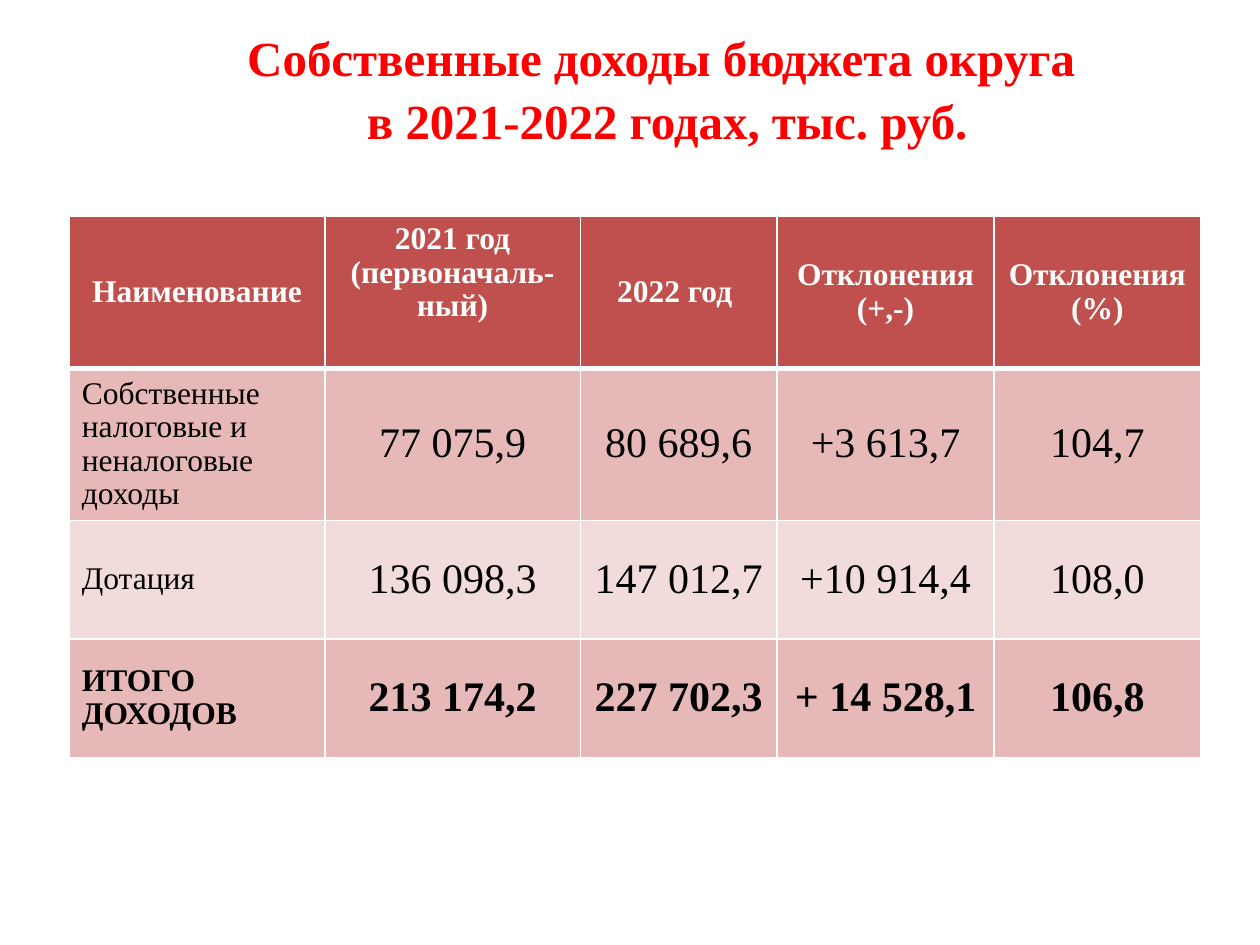
from lxml.etree import SubElement
from pptx import Presentation
from pptx.dml.color import RGBColor
from pptx.enum.text import MSO_ANCHOR, MSO_AUTO_SIZE, PP_ALIGN
from pptx.oxml.ns import qn
from pptx.util import Pt

WHITE, BLACK, RED = "FFFFFF", "000000", "FF0000"
HEADER_FILL, ODD_FILL, EVEN_FILL = "C0504D", "E6B9B8", "F2DCDB"

HEADINGS = ["Наименование", "2021 год (первоначаль-ный)", "2022 год ",
            "Отклонения (+,-)", "Отклонения (%)"]
INCOMES = [
    ["Собственные налоговые и неналоговые доходы",
     "77 075,9", "80 689,6", "+3 613,7", "104,7"],
    ["Дотация", "136 098,3", "147 012,7", "+10 914,4", "108,0"],
    ["ИТОГО ДОХОДОВ", "213 174,2", "227 702,3", "+ 14 528,1", "106,8"],
]


def rgb(value):
    return RGBColor.from_string(value)


class BudgetSlide:
    font_name = "Times New Roman"

    def __init__(self, deck):
        self.slide = deck.slides.add_slide(deck.slide_layouts[5])

    def format_runs(self, paragraph, size, color, bold):
        for run in paragraph.runs:
            run.font.name = self.font_name
            run.font.size = Pt(size)
            run.font.bold = bold
            run.font.color.rgb = rgb(color)

    def shadow(self, run):
        effects = SubElement(run.font._element, qn("a:effectLst"))
        run.font._element.find(qn("a:solidFill")).addnext(effects)
        outer = SubElement(effects, qn("a:outerShdw"), blurRad="38100",
                           dist="38100", dir="2700000", algn="tl")
        tint = SubElement(outer, qn("a:srgbClr"), val=BLACK)
        SubElement(tint, qn("a:alpha"), val="43000")

    def title(self, text, left, top, width, height):
        heading = self.slide.shapes.title
        heading.left, heading.top = Pt(left), Pt(top)
        heading.width, heading.height = Pt(width), Pt(height)
        frame = heading.text_frame
        frame.auto_size = MSO_AUTO_SIZE.NONE
        frame.vertical_anchor = MSO_ANCHOR.MIDDLE
        paragraph = frame.paragraphs[0]
        paragraph.text = text
        paragraph.alignment = PP_ALIGN.CENTER
        paragraph.line_spacing = 1.07
        self.format_runs(paragraph, 28, RED, True)
        for run in paragraph.runs:
            self.shadow(run)

    def borders(self, cell, bottom, top):
        properties = cell._tc.get_or_add_tcPr()
        widths = {"a:lnL": 1, "a:lnR": 1, "a:lnT": top, "a:lnB": bottom}
        for position, (side, width) in enumerate(widths.items()):
            line = SubElement(properties, qn(side), w=str(Pt(width)))
            properties.insert(position, line)
            fill = SubElement(line, qn("a:solidFill"))
            SubElement(fill, qn("a:srgbClr"), val=WHITE)

    def cell(self, cell, text, fill, size, color, bold, alignment):
        cell.fill.solid()
        cell.fill.fore_color.rgb = rgb(fill)
        cell.vertical_anchor = MSO_ANCHOR.MIDDLE
        paragraph = cell.text_frame.paragraphs[0]
        paragraph.text = text
        paragraph.alignment = alignment
        paragraph.line_spacing = 0.96
        self.format_runs(paragraph, size, color, bold)

    def table(self, rows, left, top, widths, heights):
        table = self.slide.shapes.add_table(
            len(rows), len(widths), Pt(left), Pt(top),
            Pt(sum(widths)), Pt(sum(heights))).table
        for column, width in zip(table.columns, widths):
            column.width = Pt(width)
        for row, height in zip(table.rows, heights):
            row.height = Pt(height)
        last = len(rows) - 1
        for r, values in enumerate(rows):
            header = r == 0
            fill = HEADER_FILL if header else ODD_FILL if r % 2 else EVEN_FILL
            for c, text in enumerate(values):
                label = c == 0 and not header
                self.cell(table.cell(r, c), text, fill,
                          18 if header or c == 0 else 24,
                          WHITE if header else BLACK,
                          r in (0, last),
                          PP_ALIGN.LEFT if label else PP_ALIGN.CENTER)
                self.borders(table.cell(r, c), 3 if header else 1,
                             3 if r == 1 else 1)
        return table


def main():
    deck = Presentation()
    deck.slide_width, deck.slide_height = Pt(720), Pt(540)
    budget = BudgetSlide(deck)
    budget.title("Собственные доходы бюджета округа \vв 2021-2022 годах, тыс. руб.",
                 78.5, 21.6, 605.5, 55.4)
    incomes = budget.table([HEADINGS, *INCOMES], 39.6, 123.8,
                           [146, 146, 112.5, 124, 118],
                           [86.8, 86.8, 67.7, 67.7])
    incomes.cell(0, 1).vertical_anchor = MSO_ANCHOR.TOP
    deck.save("out.pptx")


if __name__ == "__main__":
    main()
